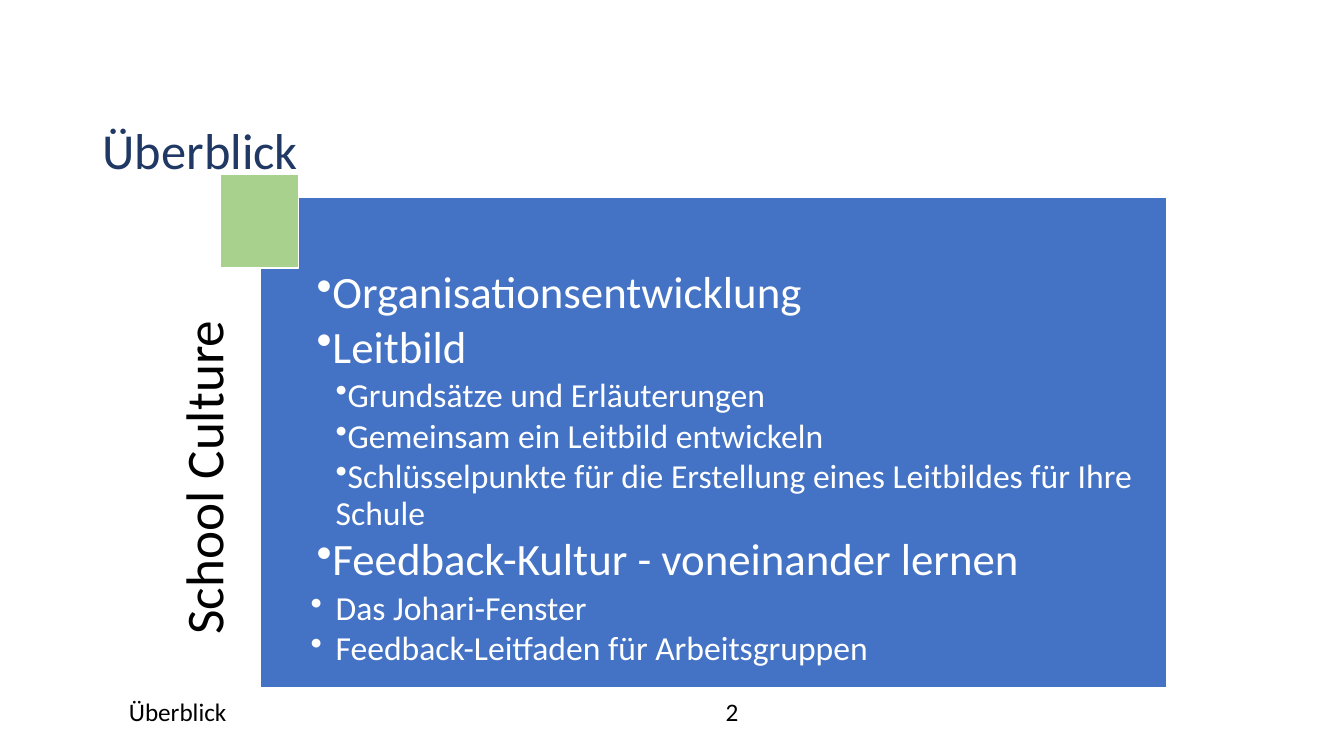
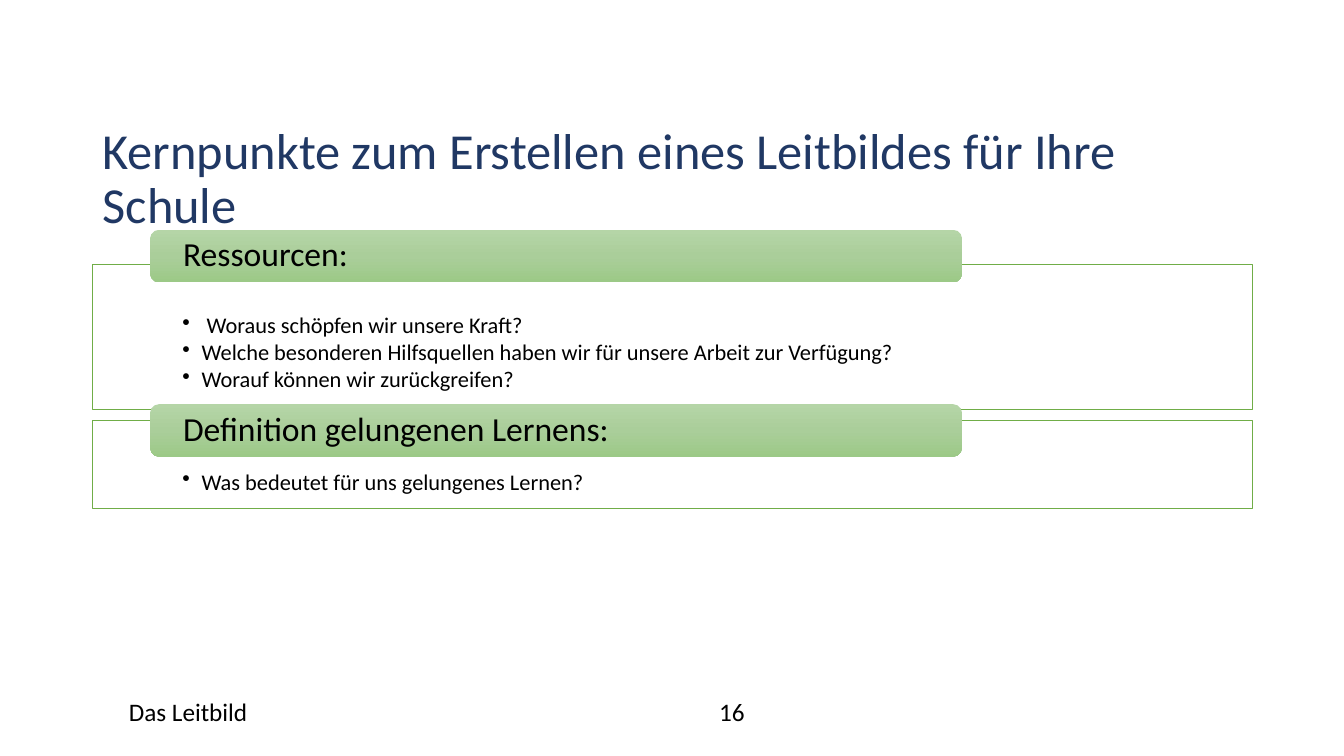
from copy import deepcopy
from dataclasses import dataclass
from typing import NamedTuple

from lxml import etree
from pptx import Presentation
from pptx.dml.color import RGBColor
from pptx.enum.shapes import MSO_SHAPE
from pptx.enum.text import MSO_ANCHOR, PP_ALIGN
from pptx.oxml.ns import qn
from pptx.util import Inches, Pt

RECT = MSO_SHAPE.RECTANGLE
ROUND = MSO_SHAPE.ROUNDED_RECTANGLE
LEFT, CENTER, RIGHT = PP_ALIGN.LEFT, PP_ALIGN.CENTER, PP_ALIGN.RIGHT
TOP, MIDDLE = MSO_ANCHOR.TOP, MSO_ANCHOR.MIDDLE


@dataclass(frozen=True)
class Theme:
    font: str = "Calibri"
    navy: str = "203864"
    blue: str = "4472C4"
    lime: str = "A9D18E"
    green: str = "70AD47"
    white: str = "FFFFFF"
    black: str = "000000"
    fade: tuple = ("B5D5A7", "AACE9A", "9CC987")
    title: int = 36
    side: int = 38
    large: int = 32
    head: int = 24
    body: int = 16
    foot: int = 18
    tight: float = 0.9
    gap: float = 0.13


THEME = Theme()


class Box(NamedTuple):
    left: float
    top: float
    width: float
    height: float


class Pad(NamedTuple):
    left: float = 0.1
    top: float = 0.05
    right: float = 0.1
    bottom: float = 0.05


class Style(NamedTuple):
    size: int
    color: str = THEME.black
    align: int = LEFT
    space: float | None = THEME.tight
    level: int = 0
    margin: float = 0
    indent: float = 0
    bullet: bool = False


class Item(NamedTuple):
    text: str
    style: Style


class Group(NamedTuple):
    head: str
    tab: float
    frame: Box
    points: tuple


TITLE = Style(THEME.title, THEME.navy)
SIDE = Style(THEME.side, align=RIGHT)
FOOT = Style(THEME.foot, space=None)
PAGE = FOOT._replace(align=CENTER)
HEAD = Style(THEME.head)
POINT = Style(THEME.body, level=1, margin=0.19, indent=-0.19, bullet=True)
MAIN = Style(THEME.large, THEME.white, level=1, margin=0.31, bullet=True)
SUB = Style(THEME.head, THEME.white, level=2, margin=0.5, bullet=True)
HANG = SUB._replace(indent=-0.25)

TOPICS = (
    Item("Organisationsentwicklung", MAIN),
    Item("Leitbild", MAIN),
    Item("Grundsätze und Erläuterungen", SUB),
    Item("Gemeinsam ein Leitbild entwickeln", SUB),
    Item("Schlüsselpunkte für die Erstellung eines Leitbildes für Ihre Schule", SUB),
    Item("Feedback-Kultur - voneinander lernen", MAIN),
    Item("Das Johari-Fenster", HANG),
    Item("Feedback-Leitfaden für Arbeitsgruppen", HANG),
)

GROUPS = (
    Group("Ressourcen:", 2.28, Box(0.92, 2.62, 11.5, 1.44), (
        " Woraus schöpfen wir unsere Kraft?",
        "Welche besonderen Hilfsquellen haben wir für unsere Arbeit zur Verfügung?",
        "Worauf können wir zurückgreifen?",
    )),
    Group("Definition gelungenen Lernens:", 4.01, Box(0.92, 4.17, 11.5, 0.87), (
        "Was bedeutet für uns gelungenes Lernen?",
    )),
)


def rgb(code: str) -> RGBColor:
    return RGBColor.from_string(code)


def place(box: Box) -> tuple:
    return tuple(Inches(side) for side in box)


def write(shape, items, pad: Pad = Pad(), anchor=TOP) -> None:
    frame = shape.text_frame
    frame.word_wrap = True
    frame.vertical_anchor = anchor
    frame.margin_left, frame.margin_top = Inches(pad.left), Inches(pad.top)
    frame.margin_right, frame.margin_bottom = Inches(pad.right), Inches(pad.bottom)
    for spot, (text, style) in enumerate(items):
        para = frame.add_paragraph() if spot else frame.paragraphs[0]
        para.alignment = style.align
        para.level = style.level
        if style.bullet:
            props = para._p.get_or_add_pPr()
            props.set("marL", str(Inches(style.margin)))
            props.set("indent", str(Inches(style.indent)))
            etree.SubElement(props, qn("a:buChar")).set("char", "•")
            para.space_after = Pt(style.size * THEME.gap)
        if style.space:
            para.line_spacing = style.space
        run = para.add_run()
        run.text = text
        run.font.name = THEME.font
        run.font.size = Pt(style.size)
        run.font.color.rgb = rgb(style.color)


def label(slide, box: Box, text: str, style: Style, pad: Pad = Pad()):
    shape = slide.shapes.add_textbox(*place(box))
    write(shape, [Item(text, style)], pad)
    return shape


def block(slide, box: Box, fill: str, line: str, width: float):
    shape = slide.shapes.add_shape(RECT, *place(box))
    shape.shadow.inherit = False
    shape.fill.solid()
    shape.fill.fore_color.rgb = rgb(fill)
    shape.line.color.rgb = rgb(line)
    shape.line.width = Pt(width)
    return shape


def banner(slide, box: Box, text: str) -> None:
    shape = slide.shapes.add_shape(ROUND, *place(box))
    shape.shadow.inherit = False
    shape.line.fill.background()
    shape.fill.gradient()
    shape.fill.gradient_angle = 270
    stops = shape._element.spPr.find(".//" + qn("a:gsLst"))
    stops.insert(1, deepcopy(stops[0]))
    for spot, (stop, code) in enumerate(zip(shape.fill.gradient_stops, THEME.fade)):
        stop.position = spot / 2
        stop.color.rgb = rgb(code)
    write(shape, [Item(text, HEAD)], Pad(0.3, 0, 0.3, 0), MIDDLE)


def section(slide, group: Group) -> None:
    frame = block(slide, group.frame, THEME.white, THEME.green, 0.5)
    tint = frame._element.spPr.find(qn("a:solidFill"))[0]
    etree.SubElement(tint, qn("a:alpha")).set("val", "90000")
    points = [Item(text, POINT) for text in group.points]
    write(frame, points, Pad(0.89, 0.5, 0.89, 0.12))
    banner(slide, Box(1.49, group.tab, 8.05, 0.52), group.head)


def start(deck, title: str, foot: str, page: str):
    slide = deck.slides.add_slide(deck.slide_layouts[6])
    label(slide, Box(0.92, 1.2, 11.5, 0.97), title, TITLE)
    label(slide, Box(1.18, 6.86, 4.5, 0.4), foot, FOOT)
    label(slide, Box(5.76, 6.86, 3, 0.4), page, PAGE)
    return slide


def outline(deck) -> None:
    slide = start(deck, "Überblick", "Überblick", "2")
    side = label(slide, Box(0.24, 3.98, 3.86, 0.82), "School Culture", SIDE,
                 Pad(0, 0, 0.72, 0))
    side.rotation = 270
    panel = block(slide, Box(2.58, 1.96, 8.99, 4.86), THEME.blue, THEME.white, 1)
    write(panel, TOPICS, Pad(0.25, 0.72, 0.25, 0.25))
    block(slide, Box(2.19, 1.73, 0.77, 0.93), THEME.lime, THEME.white, 1)


def mission(deck) -> None:
    title = "Kernpunkte zum Erstellen eines Leitbildes für Ihre Schule"
    slide = start(deck, title, "Das Leitbild", "16")
    for group in GROUPS:
        section(slide, group)


def main() -> None:
    deck = Presentation()
    deck.slide_width = Inches(13.33)
    deck.slide_height = Inches(7.5)
    outline(deck)
    mission(deck)
    deck.save("out.pptx")


if __name__ == "__main__":
    main()
